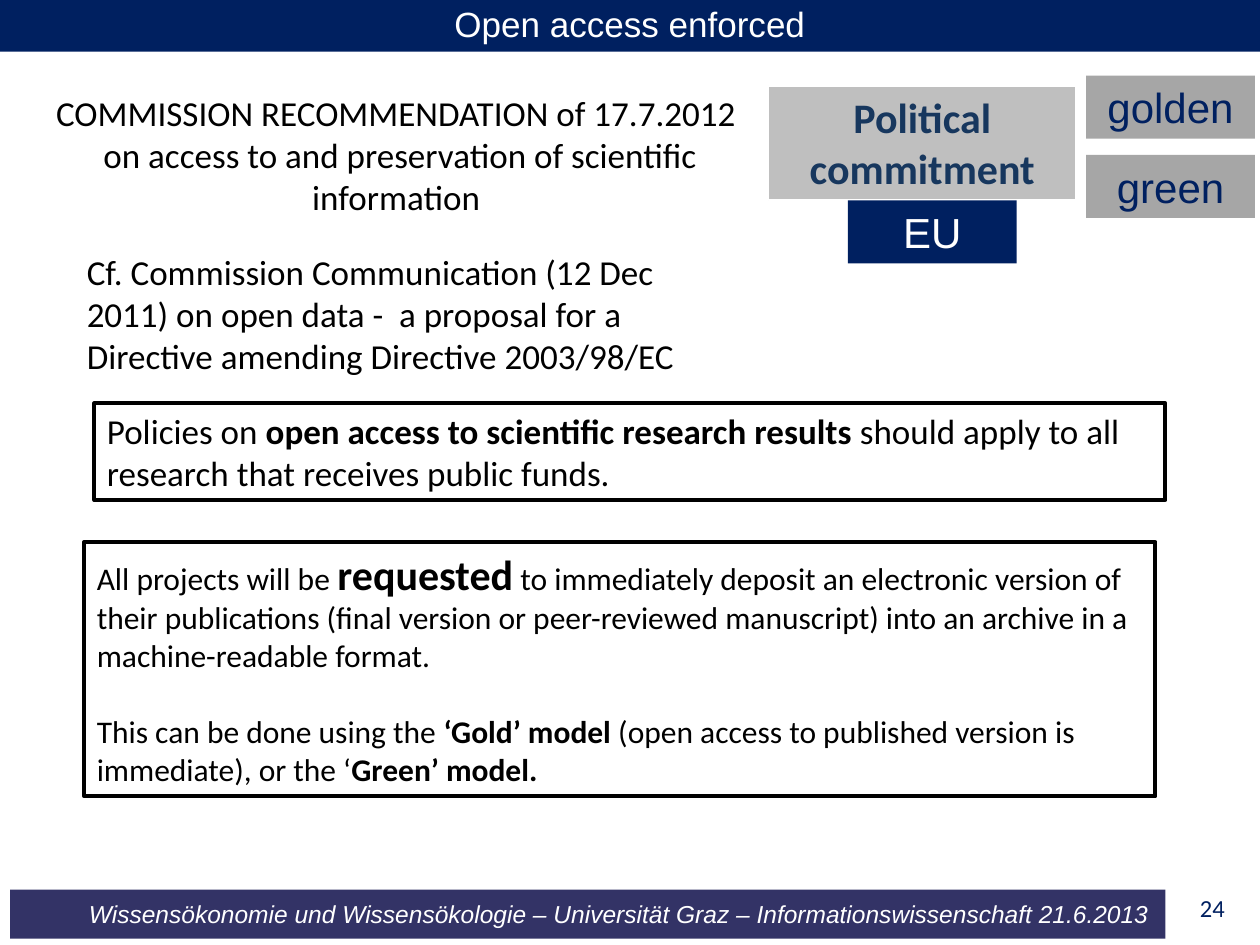
from dataclasses import dataclass

from pptx import Presentation
from pptx.dml.color import RGBColor
from pptx.enum.shapes import MSO_SHAPE
from pptx.enum.text import MSO_ANCHOR, PP_ALIGN
from pptx.util import Inches, Pt

RECT = MSO_SHAPE.RECTANGLE
TOP, MIDDLE = MSO_ANCHOR.TOP, MSO_ANCHOR.MIDDLE
LEFT, CENTER, RIGHT = PP_ALIGN.LEFT, PP_ALIGN.CENTER, PP_ALIGN.RIGHT


@dataclass(frozen=True)
class Theme:
    navy: str = "002060"
    steel: str = "17375E"
    indigo: str = "333366"
    grey: str = "A6A6A6"
    light: str = "BFBFBF"
    white: str = "FFFFFF"
    black: str = "000000"
    sans: str = "Arial"
    body: str = "Calibri"
    small: int = 14
    text: int = 18
    lead: int = 20
    large: int = 24


T = Theme()


def write(sp, paragraphs, size=T.lead, font=T.body, color=T.black, bold=False,
          italic=False, align=LEFT, anchor=TOP, margins=(0.1, 0.05, 0.1, 0.05), gap=0):
    """Each paragraph is a string or a list of (text, bold, size) runs."""
    tf = sp.text_frame
    tf.word_wrap = True
    tf.vertical_anchor = anchor
    tf.margin_left, tf.margin_top, tf.margin_right, tf.margin_bottom = map(Inches, margins)
    for i, runs in enumerate(paragraphs):
        p = tf.add_paragraph() if i else tf.paragraphs[0]
        p.alignment = align
        p.space_before = Pt(gap if i else 0)
        if isinstance(runs, str):
            runs = [(runs, bold, size)]
        for text, run_bold, run_size in runs:
            r = p.add_run()
            r.text = text
            r.font.name = font
            r.font.size = Pt(run_size)
            r.font.bold = run_bold
            r.font.italic = italic
            r.font.color.rgb = RGBColor.from_string(color)


def add_box(box, fill=None, line=None, width=1):
    sp = s.shapes.add_shape(RECT, *map(Inches, box))
    sp.shadow.inherit = False
    if fill:
        sp.fill.solid()
        sp.fill.fore_color.rgb = RGBColor.from_string(fill)
    else:
        sp.fill.background()
    if line:
        sp.line.color.rgb = RGBColor.from_string(line)
        sp.line.width = Pt(width)
    else:
        sp.line.fill.background()
    return sp


prs = Presentation()
prs.slide_width, prs.slide_height = Inches(10), Inches(7.5)
s = prs.slides.add_slide(prs.slide_layouts[6])

# Footer and page number
sp = add_box((0.08, 7.06, 9.17, 0.39), fill=T.indigo)
write(sp, ["Wissensökonomie und Wissensökologie – Universität Graz – "
           "Informationswissenschaft 21.6.2013"],
      size=T.small, font=T.sans, color=T.white, italic=True, align=CENTER,
      anchor=MIDDLE, margins=(0.5, 0, 0, 0))
sp = s.shapes.add_textbox(Inches(9.04), Inches(7.09), Inches(0.68), Inches(0.28))
write(sp, ["24"], size=T.small, color=T.navy, align=RIGHT, margins=(0, 0, 0, 0))

# Recommendation and communication
for box, paragraphs, align in [
    ((0.28, 0.68, 5.79, 1.11),
     ["COMMISSION RECOMMENDATION of 17.7.2012 ",
      "on access to and preservation of scientific information "], CENTER),
    ((0.59, 1.94, 5.28, 1.11),
     ["Cf. Commission Communication (12 Dec 2011) on open data -  a proposal "
      "for a Directive amending Directive 2003/98/EC"], LEFT),
]:
    sp = s.shapes.add_textbox(*map(Inches, box))
    write(sp, paragraphs, align=align)

# Title bar
sp = add_box((0, -0.03, 10, 0.44), fill=T.navy)
write(sp, ["Open access enforced"], font=T.sans, color=T.white, align=CENTER)

# Political commitment and its labels
sp = add_box((6.1, 0.68, 2.44, 0.91), fill=T.light, line=T.white)
write(sp, ["Political", "commitment"], size=T.large, color=T.steel, bold=True, align=CENTER)
for text, x, y, fill, color in [
    ("golden", 8.62, 0.6, T.grey, T.navy),
    ("green", 8.62, 1.23, T.grey, T.navy),
    ("EU", 6.73, 1.59, T.navy, T.white),
]:
    sp = add_box((x, y, 1.34, 0.5), fill=fill)
    write(sp, [text], size=T.large, font=T.sans, color=color, align=CENTER)

# Framed policy statements
policy = [[
    ("Policies on ", False, T.lead),
    ("open access to scientific research results ", True, T.lead),
    ("should apply to all research that receives public funds.", False, T.lead),
]]
projects = [
    [("All projects will be ", False, T.text),
     ("requested", True, T.large),
     (" to immediately deposit an electronic version of their publications (final "
      "version or peer-reviewed manuscript) into an archive in a machine-readable "
      "format.", False, T.text)],
    [("This can be done using the ", False, T.text),
     ("‘Gold’ model ", True, T.text),
     ("(open access to published version is immediate), or the ‘", False, T.text),
     ("Green’ model.", True, T.text)],
]
for box, paragraphs in [((0.75, 3.2, 8.5, 0.77), policy),
                        ((0.67, 4.3, 8.5, 2.02), projects)]:
    sp = add_box(box, line=T.black, width=2.25)
    write(sp, paragraphs, gap=22)

prs.save("out.pptx")
